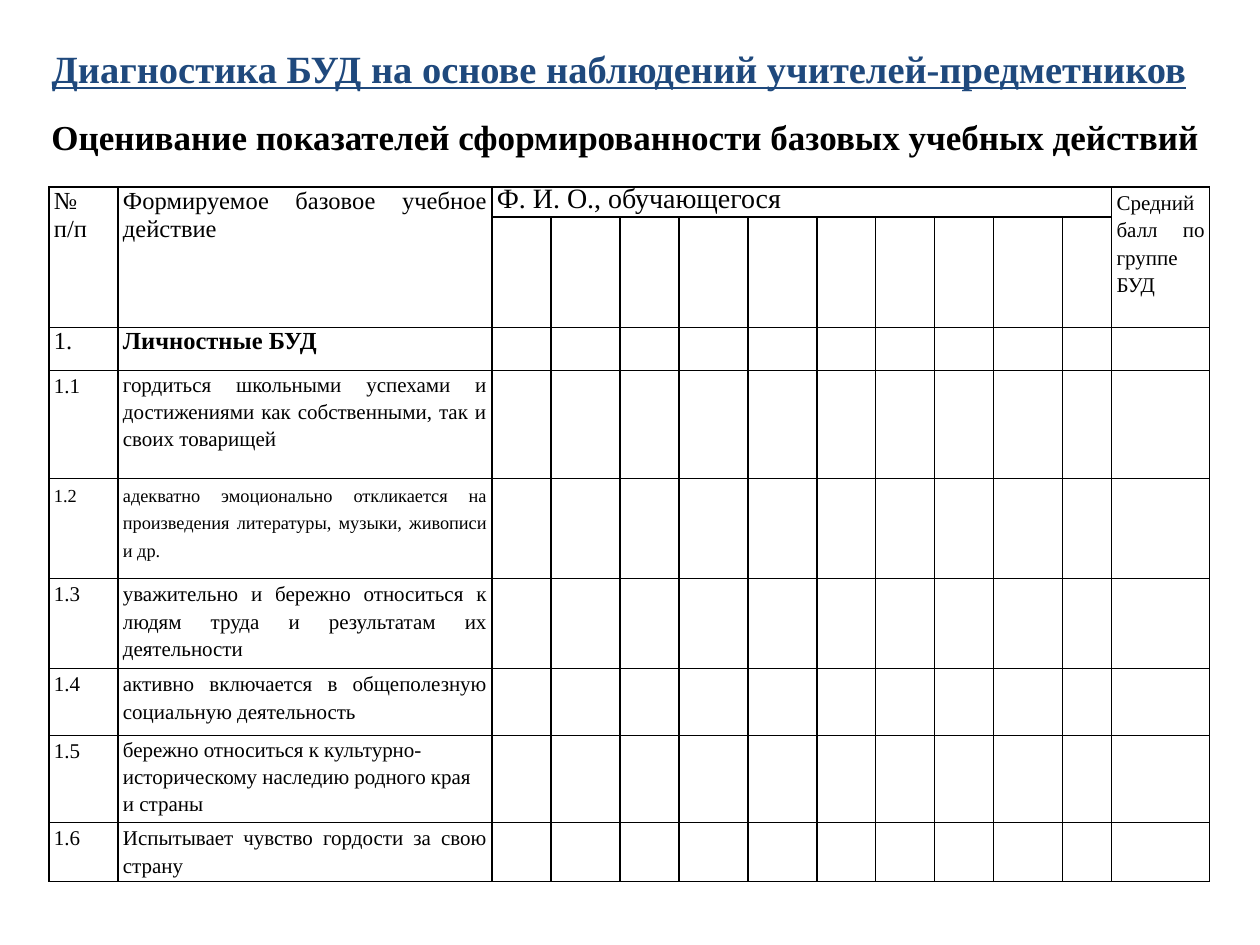
from pptx import Presentation
from pptx import util as u
from pptx.dml.color import RGBColor
from pptx.enum import shapes, text
from pptx.oxml import parse_xml
from pptx.oxml.ns import nsdecls

SCALE = 914400 / 126
FONT = "Times New Roman"
BLACK, BLUE, WHITE = "000000", "1F497D", "FFFFFF"
JUST, LEFT = text.PP_ALIGN.JUSTIFY, text.PP_ALIGN.LEFT
EXACT = u.Pt(15.8)

COLS = [69, 374, 59, 69, 59, 69, 69, 59, 59, 59, 69, 49, 98]
ROWS = [30, 110, 43, 108, 100, 90, 67, 87, 59]
LAST = len(COLS) - 1

# Number, skill, size, bold, alignment, line spacing
SKILLS = [
    ("1.", "Личностные БУД", 14, True, JUST, EXACT),
    ("1.1", "гордиться школьными успехами и достижениями как собственными, "
     "так и своих товарищей", 12, False, JUST, 1.15),
    ("1.2", "адекватно эмоционально откликается на произведения литературы, "
     "музыки, живописи и др.", 10.5, False, JUST, EXACT),
    ("1.3", "уважительно и бережно относиться к людям труда и результатам "
     "их деятельности", 12, False, JUST, EXACT),
    ("1.4", "активно включается в общеполезную социальную деятельность",
     12, False, JUST, EXACT),
    ("1.5", "бережно относиться к культурно-историческому наследию родного "
     "края и страны", 12, False, LEFT, 1.15),
    ("1.6", "Испытывает чувство гордости за свою страну",
     12, False, JUST, EXACT),
]


def px(n):
    return u.Emu(round(n * SCALE))


def color(code):
    return RGBColor.from_string(code)


def style(par, size, tint=BLACK, bold=False, align=JUST, line=None):
    par.alignment = align
    if line:
        par.line_spacing = line
    font = par.font
    font.name, font.size, font.bold = FONT, u.Pt(size), bold
    font.color.rgb = color(tint)


def place(shape, box):
    shape.left, shape.top, shape.width, shape.height = map(px, box)


def head(slide, box):
    """Blue underlined title."""
    title = slide.shapes.title
    place(title, box)
    frame = title.text_frame
    frame.text = "Диагностика БУД на основе наблюдений учителей-предметников"
    frame.vertical_anchor = text.MSO_ANCHOR.TOP
    frame.auto_size = text.MSO_AUTO_SIZE.SHAPE_TO_FIT_TEXT
    par = frame.paragraphs[0]
    style(par, 22, BLUE, True, LEFT)
    par.font.underline = True


def band(slide, box):
    """White strip with the subtitle."""
    strip = slide.shapes.add_shape(shapes.MSO_SHAPE.RECTANGLE, *map(px, box))
    strip.shadow.inherit = False
    strip.fill.solid()
    strip.fill.fore_color.rgb = color(WHITE)
    strip.line.fill.background()
    frame = strip.text_frame
    frame.word_wrap = True
    frame.vertical_anchor = text.MSO_ANCHOR.MIDDLE
    frame.auto_size = text.MSO_AUTO_SIZE.SHAPE_TO_FIT_TEXT
    frame.text = ("Оценивание показателей сформированности "
                  "базовых учебных действий")
    style(frame.paragraphs[0], 20, bold=True)


def border(cell):
    props = cell._tc.get_or_add_tcPr()
    for side in "LRTB":
        props.append(parse_xml(
            f'<a:ln{side} {nsdecls("a")} w="12700"><a:solidFill>'
            f'<a:srgbClr val="{BLACK}"/></a:solidFill></a:ln{side}>'))


def write(cell, words, size, bold=False, align=JUST, line=EXACT):
    cell.text = words
    for par in cell.text_frame.paragraphs:
        style(par, size, bold=bold, align=align, line=line)


def grid(slide, box):
    """Score table: skills down, pupils across."""
    table = slide.shapes.add_table(len(ROWS), len(COLS), *map(px, box)).table
    table.first_row = table.horz_banding = False
    for col, wide in zip(table.columns, COLS):
        col.width = px(wide)
    for row, high in zip(table.rows, ROWS):
        row.height = px(high)
    for cell in table.iter_cells():
        border(cell)
        cell.fill.background()
        cell.margin_left = cell.margin_right = px(5)
        cell.margin_top = cell.margin_bottom = 0
        style(cell.text_frame.paragraphs[0], 12)

    # Heading cells
    for col in (0, 1, LAST):
        table.cell(0, col).merge(table.cell(1, col))
    table.cell(0, 2).merge(table.cell(0, LAST - 1))
    write(table.cell(0, 0), "№\nп/п", 14)
    write(table.cell(0, 1), "Формируемое базовое учебное действие", 14)
    write(table.cell(0, 2), "Ф. И. О., обучающегося", 16)
    write(table.cell(0, LAST), "Средний балл по группе БУД", 12)

    # Skill rows
    for row, (num, skill, size, bold, align, line) in enumerate(SKILLS, 2):
        write(table.cell(row, 0), num, size)
        write(table.cell(row, 1), skill, size, bold, align, line)


def main():
    deck = Presentation()
    deck.slide_width, deck.slide_height = px(1260), px(945)
    slide = deck.slides.add_slide(deck.slide_layouts[5])
    head(slide, (39, 39, 1182, 59))
    band(slide, (39, 109, 1191, 55))
    grid(slide, (49, 187, sum(COLS), sum(ROWS)))
    deck.save("out.pptx")


if __name__ == "__main__":
    main()
